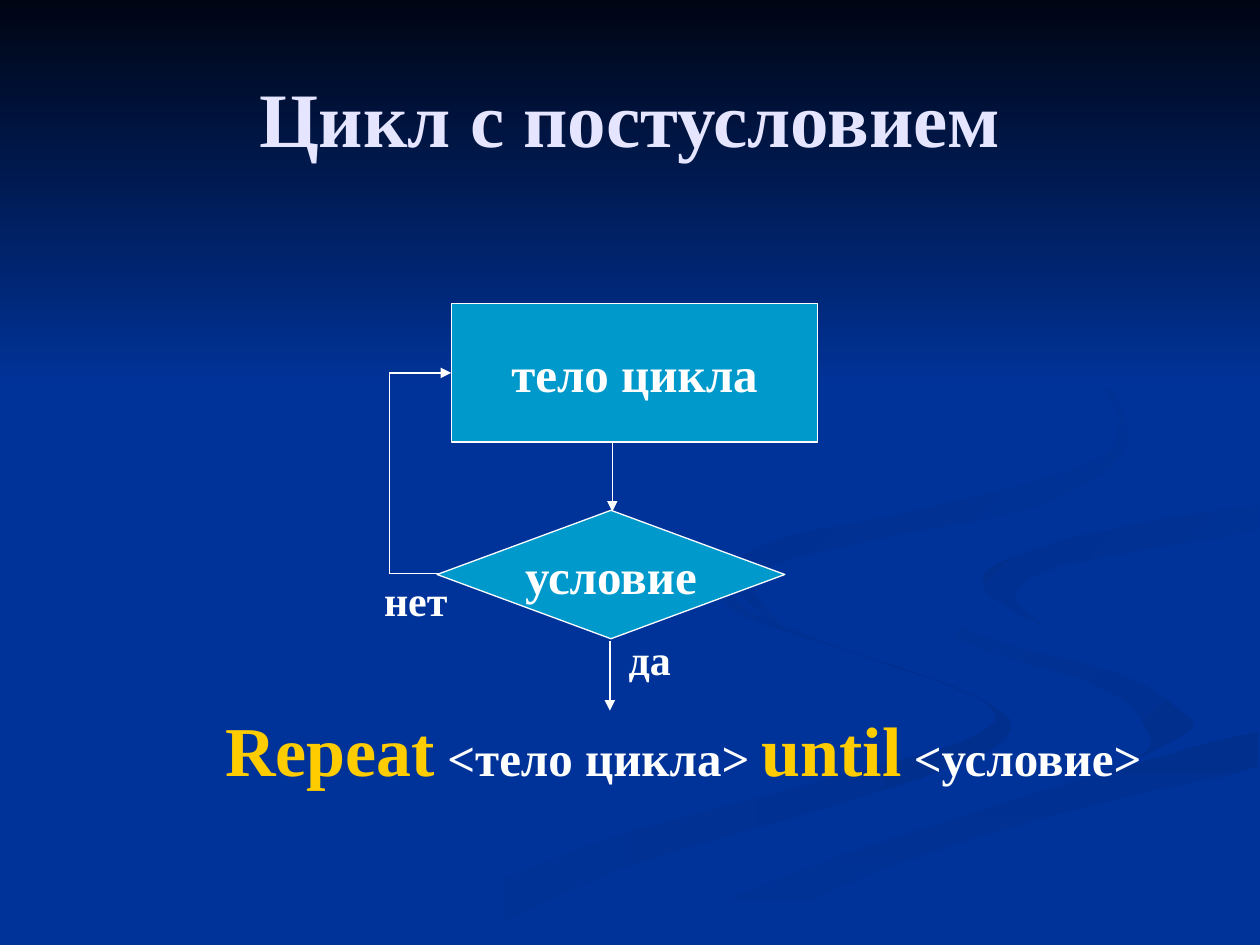
"""Build a slide with the flowchart of a loop that tests its condition last."""
from lxml.etree import SubElement
from pptx import Presentation
from pptx.dml.color import RGBColor
from pptx.enum.shapes import MSO_CONNECTOR, MSO_SHAPE
from pptx.enum.text import MSO_ANCHOR, PP_ALIGN
from pptx.oxml.ns import qn
from pptx.util import Pt

BLUE = RGBColor(0x00, 0x33, 0x99)
SHADE = RGBColor(0x00, 0x2F, 0x8E)
NIGHT = RGBColor(0x00, 0x05, 0x14)
CYAN = RGBColor(0x00, 0x99, 0xCC)
WHITE = RGBColor(0xFF, 0xFF, 0xFF)
LAVENDER = RGBColor(0xE5, 0xE5, 0xFF)
GOLD = RGBColor(0xFF, 0xCC, 0x00)


def paint_gradient(shape, first, last, angle):
    shape.shadow.inherit = False
    shape.line.fill.background()
    shape.fill.gradient()
    shape.fill.gradient_angle = angle
    for stop, color in zip(shape.fill.gradient_stops, (first, last)):
        stop.color.rgb = color


def write_spans(shape, spans, align, anchor, wrap):
    frame = shape.text_frame
    frame.word_wrap = wrap
    frame.vertical_anchor = anchor
    para = frame.paragraphs[0]
    para.alignment = align
    for text, size, color in spans:
        span = para.add_run()
        span.text = text
        span.font.name = "Times New Roman"
        span.font.size = Pt(size)
        span.font.bold = True
        span.font.color.rgb = color


deck = Presentation()
deck.slide_width, deck.slide_height = Pt(720), Pt(540)
page = deck.slides.add_slide(deck.slide_layouts[6])
page.background.fill.solid()
page.background.fill.fore_color.rgb = BLUE

ribbons = [
    (BLUE, SHADE, 0, [
        (562, 400), (491, 374), (428, 349), (414, 330), (422, 351),
        (502, 378), (564, 402), (552, 423), (444, 453), (330, 485),
        (216, 539), (260, 539), (359, 495), (503, 452), (574, 423)]),
    (BLUE, SHADE, 315, [
        (679, 410), (639, 385), (557, 362), (521, 334), (544, 364),
        (634, 395), (658, 424), (644, 436), (676, 420)]),
    (SHADE, BLUE, 270, [
        (362, 539), (411, 539), (500, 498), (620, 461), (719, 438),
        (719, 418), (574, 459), (454, 499)]),
    (SHADE, BLUE, 315, [
        (562, 331), (566, 341), (595, 357), (580, 341), (607, 323),
        (719, 302), (719, 289), (623, 305), (570, 322)]),
    (SHADE, BLUE, 315, [
        (492, 310), (594, 289), (640, 261), (641, 233), (626, 215),
        (640, 241), (620, 266), (528, 291), (443, 309), (416, 330),
        (448, 360), (429, 335), (442, 323)]),
]
for first, last, angle, knots in ribbons:
    curve = []
    for i, start in enumerate(knots):
        before, end, after = knots[i - 1], knots[(i + 1) % len(knots)], knots[(i + 2) % len(knots)]
        for t in (0, 0.25, 0.5, 0.75):
            x, y = (
                b + ((c - a) * t + (2 * a - 5 * b + 4 * c - d) * t ** 2
                     + (3 * b - a - 3 * c + d) * t ** 3) / 2
                for a, b, c, d in zip(before, start, end, after)
            )
            curve.append((min(x, 719), min(y, 539)))
    outline = page.shapes.build_freeform(*curve[0], scale=Pt(1))
    outline.add_line_segments(curve[1:], close=True)
    paint_gradient(outline.convert_to_shape(), first, last, angle)

sky = page.shapes.add_shape(MSO_SHAPE.RECTANGLE, 0, 0, Pt(720), Pt(221.8))
paint_gradient(sky, NIGHT, BLUE, 270)

title = page.shapes.add_textbox(Pt(36), Pt(21.6), Pt(648), Pt(90))
write_spans(title, [("Цикл с постусловием", 44, LAVENDER)],
            PP_ALIGN.CENTER, MSO_ANCHOR.MIDDLE, True)

blocks = {}
for kind, text, left, top, width, height in (
    (MSO_SHAPE.RECTANGLE, "тело цикла", 257.8, 173.5, 209.5, 79.2),
    (MSO_SHAPE.DIAMOND, "условие", 249.8, 291.6, 198.7, 73.4),
):
    block = page.shapes.add_shape(kind, Pt(left), Pt(top), Pt(width), Pt(height))
    block.shadow.inherit = False
    block.fill.solid()
    block.fill.fore_color.rgb = CYAN
    block.line.color.rgb = WHITE
    block.line.width = Pt(0.75)
    write_spans(block, [(text, 28, WHITE)], PP_ALIGN.CENTER, MSO_ANCHOR.MIDDLE, False)
    blocks[text] = block

for x1, y1, x2, y2, arrow, target in (
    (349.9, 252.7, 349.9, 292.3, True, None),
    (348.5, 366.5, 348.5, 406.1, True, None),
    (251.3, 327.6, 222.5, 327.6, False, None),
    (222.5, 327.6, 222.5, 213.1, False, None),
    (222.5, 213.1, 257.8, 213.1, True, "тело цикла"),
):
    flow = page.shapes.add_connector(MSO_CONNECTOR.STRAIGHT, Pt(x1), Pt(y1), Pt(x2), Pt(y2))
    flow.line.color.rgb = WHITE
    flow.line.width = Pt(0.75)
    if arrow:
        SubElement(flow.line._get_or_add_ln(), qn("a:tailEnd"), type="triangle")
    if target:
        flow.end_connect(blocks[target], 1)
    SubElement(flow._element.spPr, qn("a:effectLst"))

for left, top, width, height, spans in (
    (212.4, 324.7, 62.6, 36, [("нет", 24, WHITE)]),
    (352.1, 358.6, 39.6, 36, [("да", 24, WHITE)]),
    (121.7, 400.3, 538.6, 55.4, [
        ("Repeat", 40, GOLD), (" <тело цикла> ", 28, WHITE),
        ("until", 40, GOLD), (" <условие>", 28, WHITE)]),
):
    caption = page.shapes.add_textbox(Pt(left), Pt(top), Pt(width), Pt(height))
    write_spans(caption, spans, PP_ALIGN.LEFT, MSO_ANCHOR.TOP, True)

deck.save("out.pptx")
